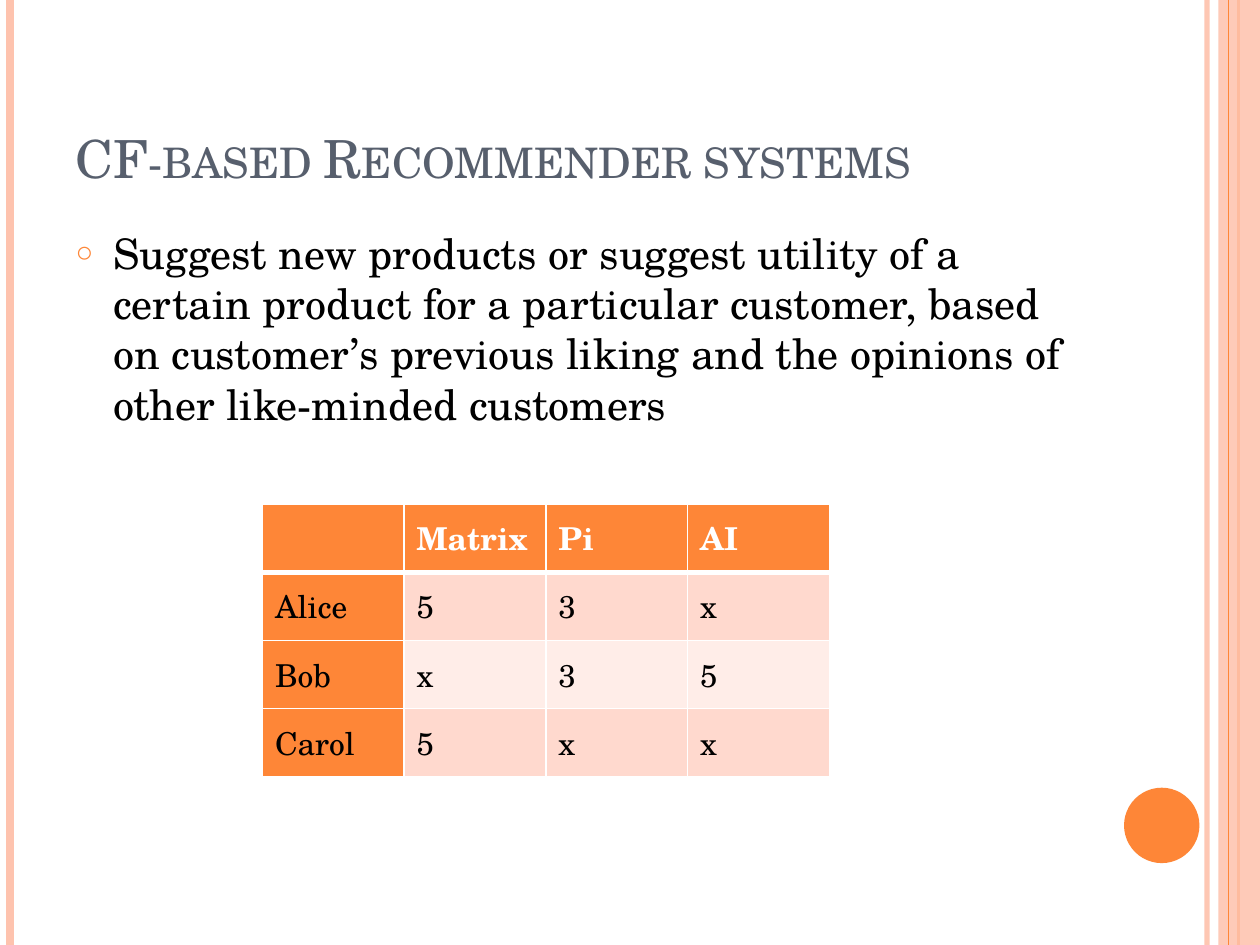
from dataclasses import dataclass

from lxml.etree import SubElement
from pptx import Presentation
from pptx.dml.color import RGBColor
from pptx.enum.shapes import MSO_CONNECTOR, MSO_SHAPE
from pptx.enum.text import MSO_ANCHOR, PP_ALIGN
from pptx.oxml.ns import qn
from pptx.util import Cm, Pt

WIDE, HIGH = 25.4, 19.05


@dataclass(frozen=True)
class Theme:
    font: str = "TeX Gyre Schola"
    accent: str = "FE8637"
    pale: str = "FEC3AE"
    slate: str = "575F6D"
    ink: str = "000000"
    white: str = "FFFFFF"
    bands: tuple = ("FFD9CE", "FFEDE8")
    head: int = 30
    body: int = 24
    cell: int = 18


def paint(fill, color, alpha=100):
    """Fill with one colour; alpha is the opacity in percent."""
    fill.solid()
    fill.fore_color.rgb = RGBColor.from_string(color)
    if alpha < 100:
        tint = fill._xPr.find(qn("a:solidFill"))[0]
        SubElement(tint, qn("a:alpha"), val=str(alpha * 1000))


class Deck:
    def __init__(self, theme):
        self.theme = theme
        self.show = Presentation()
        self.show.slide_width, self.show.slide_height = Cm(WIDE), Cm(HIGH)
        self.slide = self.show.slides.add_slide(self.show.slide_layouts[1])

    def label(self, para, text, size, color, bold=False):
        """Add one styled run to a paragraph."""
        run = para.add_run()
        run.text = text
        run.font.name, run.font.size, run.font.bold = self.theme.font, Pt(size), bold
        run.font.color.rgb = RGBColor.from_string(color)
        return run

    def rule(self, x, color, width, alpha=100):
        """Draw a vertical line over the full height of the slide."""
        line = self.slide.shapes.add_connector(
            MSO_CONNECTOR.STRAIGHT, Cm(x), Cm(0), Cm(x), Cm(HIGH))
        line.line.width = Pt(width)
        paint(line.line.fill, color, alpha)
        SubElement(line._element.spPr, qn("a:effectLst"))

    def shape(self, kind, box, color, alpha=100):
        item = self.slide.shapes.add_shape(kind, *map(Cm, box))
        item.shadow.inherit = False
        item.line.fill.background()
        paint(item.fill, color, alpha)

    def place(self, holder, box, anchor):
        """Move a placeholder and return its first paragraph."""
        holder.left, holder.top, holder.width, holder.height = map(Cm, box)
        holder.text_frame.word_wrap = True
        holder.text_frame.vertical_anchor = anchor
        return holder.text_frame.paragraphs[0]

    def title(self, text, box):
        para = self.place(self.slide.shapes.title, box, MSO_ANCHOR.BOTTOM)
        para.alignment = PP_ALIGN.LEFT
        run = self.label(para, text, self.theme.head, self.theme.slate)
        run.font._element.set("cap", "small")

    def bullet(self, text, box):
        para = self.place(self.slide.placeholders[1], box, MSO_ANCHOR.TOP)
        para.space_before = Pt(6)
        props = para._p.get_or_add_pPr()
        props.set("marL", str(Cm(0.76)))
        props.set("indent", str(Cm(-0.76)))
        SubElement(SubElement(props, qn("a:buClr")), qn("a:srgbClr"), val=self.theme.accent)
        SubElement(props, qn("a:buSzPct"), val="70000")
        SubElement(props, qn("a:buChar"), char="○")
        self.label(para, text, self.theme.body, self.theme.ink)

    def border(self, cell, row):
        """Draw thin white edges, with a thick one below the header row."""
        props = cell._tc.get_or_add_tcPr()
        top, low = 3 if row == 1 else 1, 3 if row == 0 else 1
        for side, width in zip("LRTB", (1, 1, top, low)):
            line = SubElement(props, qn(f"a:ln{side}"), w=str(Pt(width)))
            SubElement(SubElement(line, qn("a:solidFill")), qn("a:srgbClr"),
                       val=self.theme.white)

    def table(self, rows, box):
        look = self.theme
        grid = self.slide.shapes.add_table(len(rows), len(rows[0]), *map(Cm, box)).table
        for r, row in enumerate(rows):
            for c, text in enumerate(row):
                cell, top = grid.cell(r, c), r == 0
                cell.vertical_anchor = MSO_ANCHOR.MIDDLE
                self.border(cell, r)
                paint(cell.fill, look.accent if top or c == 0 else look.bands[(r - 1) % 2])
                if text:
                    self.label(cell.text_frame.paragraphs[0], text, look.cell,
                               look.white if top else look.ink, top)


def main():
    look = Theme()
    deck = Deck(look)
    deck.rule(24.33, look.pale, 3, 93)
    deck.rule(0.2, look.pale, 4.5)
    deck.rule(24.97, look.accent, 1.5)
    deck.shape(MSO_SHAPE.RECTANGLE, (24.56, 0, WIDE - 24.56, HIGH), look.pale, 87)
    deck.rule(24.77, look.accent, 0.75)
    deck.shape(MSO_SHAPE.OVAL, (22.66, 15.88, 1.52, 1.52), look.accent)
    deck.title("CF-based Recommender systems", (1.27, 0.76, 20.75, 3.18))
    deck.bullet("Suggest new products or suggest utility of a certain product for a "
                "particular customer, based on customer’s previous liking and the "
                "opinions of other like-minded customers", (1.27, 4.45, 20.75, 13.54))
    deck.table([("", "Matrix", "Pi", "AI"),
                ("Alice", "5", "3", "x"),
                ("Bob", "x", "3", "5"),
                ("Carol", "5", "x", "x")], (5.29, 10.16, 11.43, 5.5))
    deck.show.save("out.pptx")


if __name__ == "__main__":
    main()
